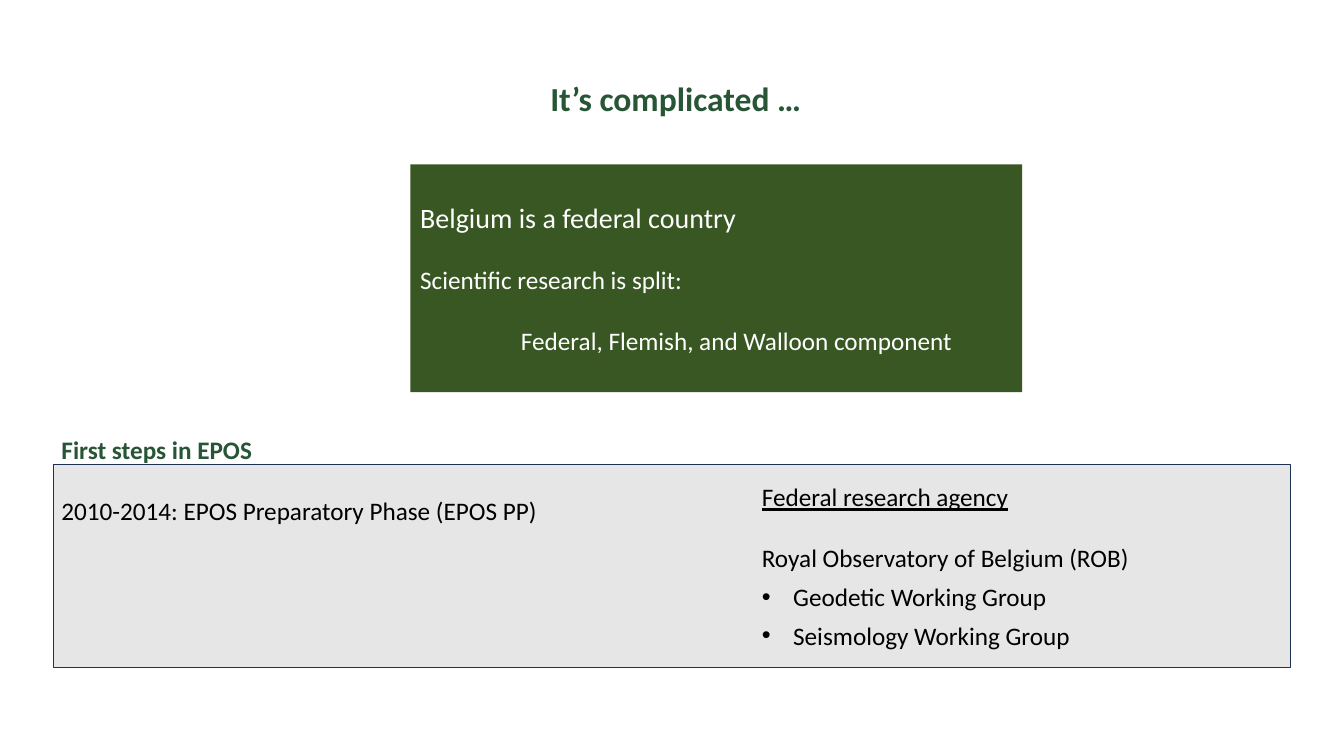
from lxml import etree
from pptx import Presentation
from pptx.dml.color import RGBColor
from pptx.enum.shapes import MSO_SHAPE
from pptx.enum.text import MSO_ANCHOR, PP_ALIGN
from pptx.oxml.ns import qn
from pptx.util import Cm, Pt

COLOURS = {
    "heading": "275536",
    "panel": "E7E6E6",
    "panel line": "1E3256",
    "box": "385723",
    "white": "FFFFFF",
    "black": "000000",
}


def colour(name):
    return RGBColor.from_string(COLOURS[name])


def write_lines(shape, lines, text_colour):
    text_frame = shape.text_frame
    text_frame.word_wrap = True
    text_frame.text = "\n".join(text for text, size, before, after in lines)
    for paragraph, (text, size, before, after) in zip(text_frame.paragraphs, lines):
        paragraph.alignment = PP_ALIGN.LEFT
        paragraph.space_before = Pt(before)
        paragraph.space_after = Pt(after)
        for run in paragraph.runs:
            run.font.name = "Calibri"
            run.font.size = Pt(size)
            run.font.color.rgb = colour(text_colour)
    return text_frame.paragraphs


presentation = Presentation()
presentation.slide_width = Cm(33.87)
presentation.slide_height = Cm(19.05)
slide = presentation.slides.add_slide(presentation.slide_layouts[5])

panel = slide.shapes.add_shape(MSO_SHAPE.RECTANGLE, Cm(1.35), Cm(11.71), Cm(31.17), Cm(5.11))
panel.shadow.inherit = False
panel.fill.solid()
panel.fill.fore_color.rgb = colour("panel")
panel.line.color.rgb = colour("panel line")
panel.line.width = Pt(1)

title = slide.shapes.title
title.left, title.top, title.width, title.height = Cm(0.66), Cm(1.83), Cm(32.74), Cm(1.27)
title.text_frame.vertical_anchor = MSO_ANCHOR.MIDDLE
title_paragraph = write_lines(title, [("It’s complicated …", 24, 0, 0)], "heading")[0]
title_paragraph.alignment = PP_ALIGN.CENTER
title_paragraph.runs[0].font.bold = True

first_steps = slide.shapes.add_textbox(Cm(1.3), Cm(10.82), Cm(15.5), Cm(2.8))
first_steps_lines = [
    ("First steps in EPOS", 18, 0, 0),
    ("2010-2014: EPOS Preparatory Phase (EPOS PP)", 18, 22, 0),
]
heading = write_lines(first_steps, first_steps_lines, "black")[0].runs[0]
heading.font.bold = True
heading.font.color.rgb = colour("heading")

agency = slide.shapes.add_textbox(Cm(18.95), Cm(12.01), Cm(13.61), Cm(4.52))
agency_lines = [
    ("Federal research agency", 18, 0, 0),
    ("Royal Observatory of Belgium (ROB)", 18, 22, 6),
    ("Geodetic Working Group", 18, 0, 6),
    ("Seismology Working Group", 18, 0, 6),
]
agency_paragraphs = write_lines(agency, agency_lines, "black")
agency_paragraphs[0].runs[0].font.underline = True
for paragraph in agency_paragraphs[2:]:
    properties = paragraph._p.get_or_add_pPr()
    properties.set("marL", str(Cm(0.79)))
    properties.set("indent", str(Cm(-0.79)))
    etree.SubElement(properties, qn("a:buFont")).set("typeface", "Arial")
    etree.SubElement(properties, qn("a:buChar")).set("char", "•")

country = slide.shapes.add_shape(MSO_SHAPE.RECTANGLE, Cm(10.34), Cm(4.14), Cm(15.42), Cm(5.74))
country.shadow.inherit = False
country.fill.solid()
country.fill.fore_color.rgb = colour("box")
country.line.fill.background()
country.text_frame.vertical_anchor = MSO_ANCHOR.MIDDLE
country_lines = [
    ("Belgium is a federal country", 20, 0, 0),
    ("Scientific research is split:", 18, 22, 0),
    ("Federal, Flemish, and Walloon component", 18, 22, 0),
]
components = write_lines(country, country_lines, "white")[2]
components._p.get_or_add_pPr().set("marL", str(Cm(2.54)))

presentation.save("out.pptx")
